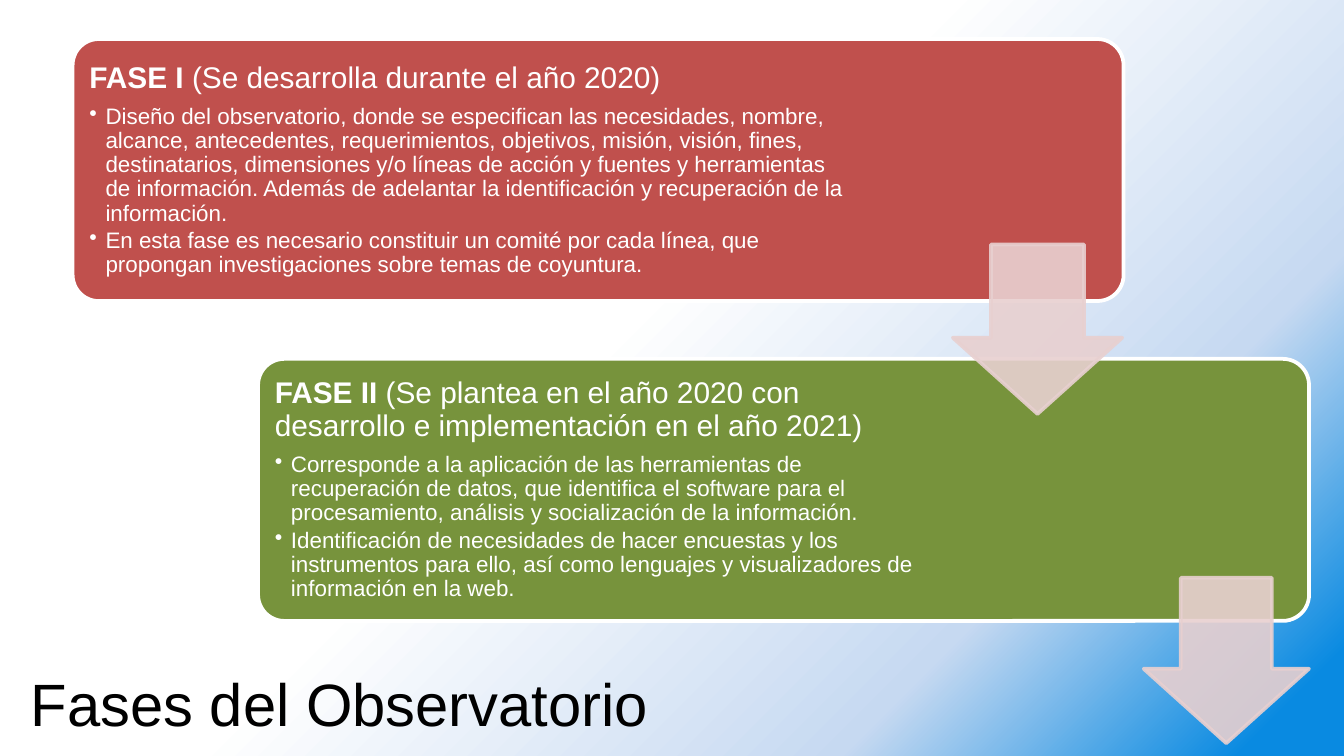
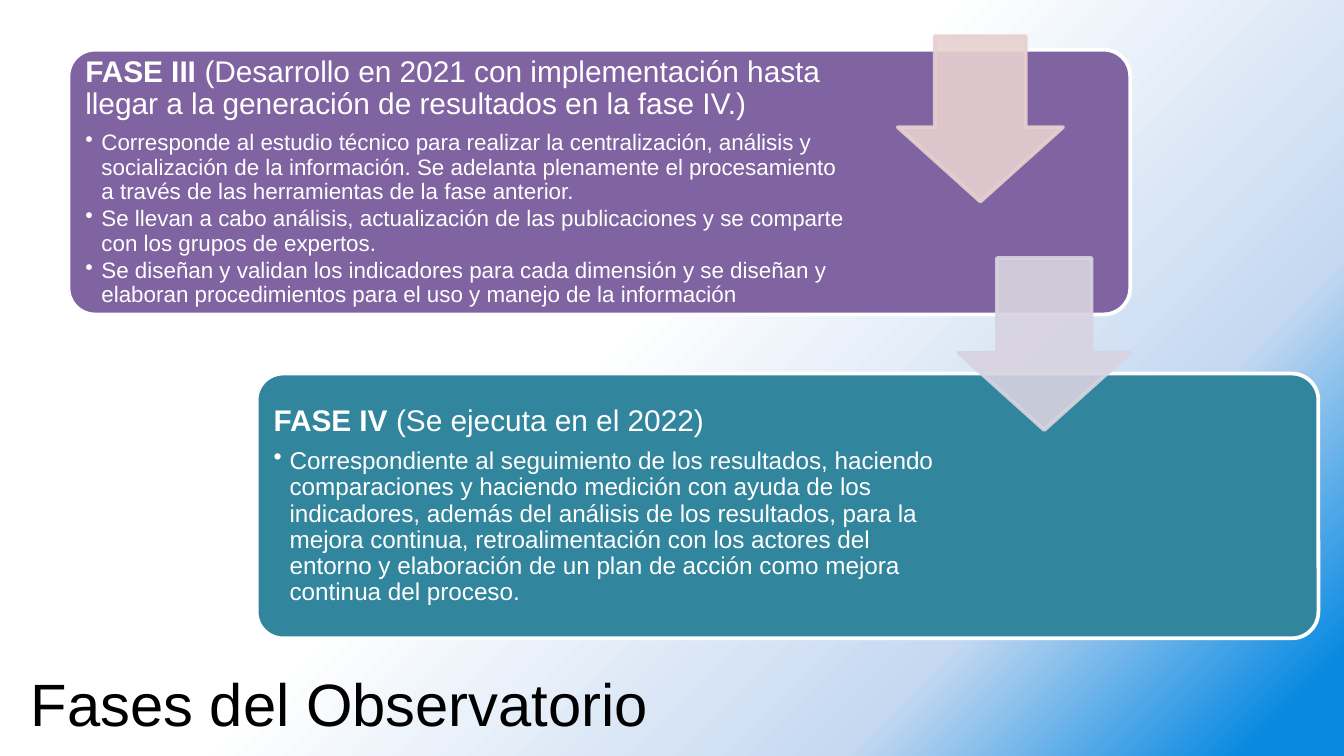
from dataclasses import dataclass
from copy import deepcopy

from lxml.etree import SubElement
from pptx import Presentation
from pptx.dml.color import RGBColor
from pptx.enum.shapes import MSO_SHAPE
from pptx.enum.text import MSO_ANCHOR
from pptx.oxml.ns import qn
from pptx.shapes.autoshape import Shape
from pptx.slide import Slide
from pptx.text.text import TextFrame, _Paragraph
from pptx.util import Emu, Pt

EMU_PER_PX = 4572
SLIDE_WIDTH, SLIDE_HEIGHT = 2000, 1125
TITLE = "Fases del Observatorio"
TITLE_BOX = (26, 984, 1622, 124)
PANEL_GAP = 11
PANEL_INSET = 14
BULLET_INDENT = 24


@dataclass(frozen=True)
class Theme:
    font: str = "Arial"
    title_size: int = 32
    heading_size: int = 16
    outline: int = 2
    line_spacing: float = 0.9
    heading_after: float = 0.35
    detail_after: float = 0.15
    arrow_alpha: int = 90
    ink: str = "000000"
    paper: str = "FFFFFF"
    red: str = "C0504D"
    green: str = "77933C"
    purple: str = "8064A2"
    teal: str = "31859C"
    rose: str = "E8D0D0"
    lilac: str = "D8D3E0"
    backdrop: tuple[tuple[float, str], ...] = (
        (0.45, "FFFFFF"), (0.76, "C6D9F1"), (0.95, "098AE1"))


THEME = Theme()


@dataclass(frozen=True)
class Phase:
    name: str
    period: str
    details: tuple[str, ...]
    color: str
    left: int
    top: int
    width: int
    height: int
    text_width: int
    detail_size: int = 12


@dataclass(frozen=True)
class Arrow:
    left: int
    top: int
    side: int
    color: str


@dataclass(frozen=True)
class Stage:
    phases: tuple[Phase, ...]
    arrows: tuple[Arrow, ...]


STAGES = (
    Stage(
        phases=(
            Phase("FASE I", "(Se desarrolla durante el año 2020)", (
                "Diseño del observatorio, donde se especifican las necesidades, nombre, "
                "alcance, antecedentes, requerimientos, objetivos, misión, visión, fines, "
                "destinatarios, dimensiones y/o líneas de acción y fuentes y herramientas "
                "de información. Además de adelantar la identificación y recuperación de "
                "la información.",
                "En esta fase es necesario constituir un comité por cada línea, que "
                "propongan investigaciones sobre temas de coyuntura.",
            ), THEME.red, 108, 58, 1564, 390, 1162),
            Phase("FASE II", "(Se plantea en el año 2020 con desarrollo e implementación "
                  "en el año 2021)", (
                "Corresponde a la aplicación de las herramientas de recuperación de datos, "
                "que identifica el software para el procesamiento, análisis y "
                "socialización de la información.",
                "Identificación de necesidades de hacer encuestas y los instrumentos para "
                "ello, así como lenguajes y visualizadores de información en la web.",
            ), THEME.green, 384, 534, 1564, 390, 1012),
        ),
        arrows=(Arrow(1418, 364, 252, THEME.rose), Arrow(1702, 860, 246, THEME.rose)),
    ),
    Stage(
        phases=(
            Phase("FASE III", "(Desarrollo en 2021 con implementación hasta llegar a la "
                  "generación de resultados en la fase IV.)", (
                "Corresponde al estudio técnico para realizar la centralización, análisis "
                "y socialización de la información. Se adelanta plenamente el "
                "procesamiento a través de las herramientas de la fase anterior.",
                "Se llevan a cabo análisis, actualización de las publicaciones y se "
                "comparte con los grupos de expertos.",
                "Se diseñan y validan los indicadores para cada dimensión y se diseñan y "
                "elaboran procedimientos para el uso y manejo de la información",
            ), THEME.purple, 102, 74, 1580, 394, 1174),
            Phase("FASE IV", "(Se ejecuta en el 2022)", (
                "Correspondiente al seguimiento de los resultados, haciendo comparaciones "
                "y haciendo medición con ayuda de los indicadores, además del análisis de "
                "los resultados, para la mejora continua, retroalimentación con los "
                "actores del entorno y elaboración de un plan de acción como mejora "
                "continua del proceso.",
            ), THEME.teal, 382, 556, 1580, 394, 1022, 13),
        ),
        arrows=(Arrow(1426, 384, 256, THEME.lilac), Arrow(1336, 54, 246, THEME.rose)),
    ),
)


def px(length: int) -> Emu:
    return Emu(length * EMU_PER_PX)


def paint_backdrop(slide: Slide) -> None:
    fill = slide.background.fill
    fill.gradient()
    fill.gradient_angle = 315
    last = fill.gradient_stops[-1]._gs
    last.addnext(deepcopy(last))
    for stop, (position, color) in zip(fill.gradient_stops, THEME.backdrop):
        stop.position = position
        stop.color.rgb = RGBColor.from_string(color)


def add_text_area(slide: Slide, box: tuple[int, int, int, int]) -> TextFrame:
    area = slide.shapes.add_textbox(*map(px, box)).text_frame
    area.word_wrap = True
    area.vertical_anchor = MSO_ANCHOR.MIDDLE
    return area


def set_font(paragraph: _Paragraph, size: int, color: str) -> None:
    paragraph.font.name = THEME.font
    paragraph.font.size = Pt(size)
    paragraph.font.color.rgb = RGBColor.from_string(color)


def set_spacing(paragraph: _Paragraph, size: int, after: float) -> None:
    paragraph.line_spacing = THEME.line_spacing
    paragraph.space_after = Pt(size * after)


def add_title(slide: Slide) -> None:
    title = add_text_area(slide, TITLE_BOX).paragraphs[0]
    title.add_run().text = TITLE
    set_font(title, THEME.title_size, THEME.ink)


def add_figure(slide: Slide, preset: MSO_SHAPE, box: tuple[int, int, int, int],
               adjustments: tuple[float, ...], fill: str, outline: str) -> Shape:
    figure = slide.shapes.add_shape(preset, *map(px, box))
    figure.shadow.inherit = False
    for index, value in enumerate(adjustments):
        figure.adjustments[index] = value
    figure.fill.solid()
    figure.fill.fore_color.rgb = RGBColor.from_string(fill)
    figure.line.width = Pt(THEME.outline)
    figure.line.color.rgb = RGBColor.from_string(outline)
    SubElement(figure.line._ln, qn("a:round"))
    return figure


def add_detail(area: TextFrame, detail: str, size: int) -> None:
    paragraph = area.add_paragraph()
    paragraph.level = 1
    paragraph.add_run().text = detail
    set_spacing(paragraph, size, THEME.detail_after)
    properties = paragraph._p.get_or_add_pPr()
    properties.set("marL", str(px(BULLET_INDENT)))
    properties.set("indent", str(-px(BULLET_INDENT)))
    SubElement(properties, qn("a:buChar"), char="•")
    set_font(paragraph, size, THEME.paper)


def add_phase(slide: Slide, phase: Phase) -> None:
    add_figure(slide, MSO_SHAPE.ROUNDED_RECTANGLE,
               (phase.left, phase.top, phase.width, phase.height),
               (0.1,), phase.color, THEME.paper)
    area = add_text_area(slide, (phase.left + PANEL_GAP, phase.top + PANEL_GAP,
                                 phase.text_width, phase.height - 2 * PANEL_GAP))
    area.margin_left = area.margin_right = px(PANEL_INSET)
    area.margin_top = area.margin_bottom = px(PANEL_INSET)
    heading = area.paragraphs[0]
    set_spacing(heading, THEME.heading_size, THEME.heading_after)
    set_font(heading, THEME.heading_size, THEME.paper)
    for text, bold in ((f"{phase.name} ", True), (phase.period, False)):
        run = heading.add_run()
        run.text = text
        run.font.bold = bold
    for detail in phase.details:
        add_detail(area, detail, phase.detail_size)


def add_arrow(slide: Slide, arrow: Arrow) -> None:
    figure = add_figure(slide, MSO_SHAPE.DOWN_ARROW,
                        (arrow.left, arrow.top, arrow.side, arrow.side),
                        (0.55, 0.45), arrow.color, arrow.color)
    for color in figure._element.spPr.iter(qn("a:srgbClr")):
        SubElement(color, qn("a:alpha"), val=str(THEME.arrow_alpha * 1000))


def main() -> None:
    deck = Presentation()
    deck.slide_width, deck.slide_height = px(SLIDE_WIDTH), px(SLIDE_HEIGHT)
    for stage in STAGES:
        slide = deck.slides.add_slide(deck.slide_layouts[6])
        paint_backdrop(slide)
        add_title(slide)
        for phase in stage.phases:
            add_phase(slide, phase)
        for arrow in stage.arrows:
            add_arrow(slide, arrow)
    deck.save("out.pptx")


if __name__ == "__main__":
    main()
